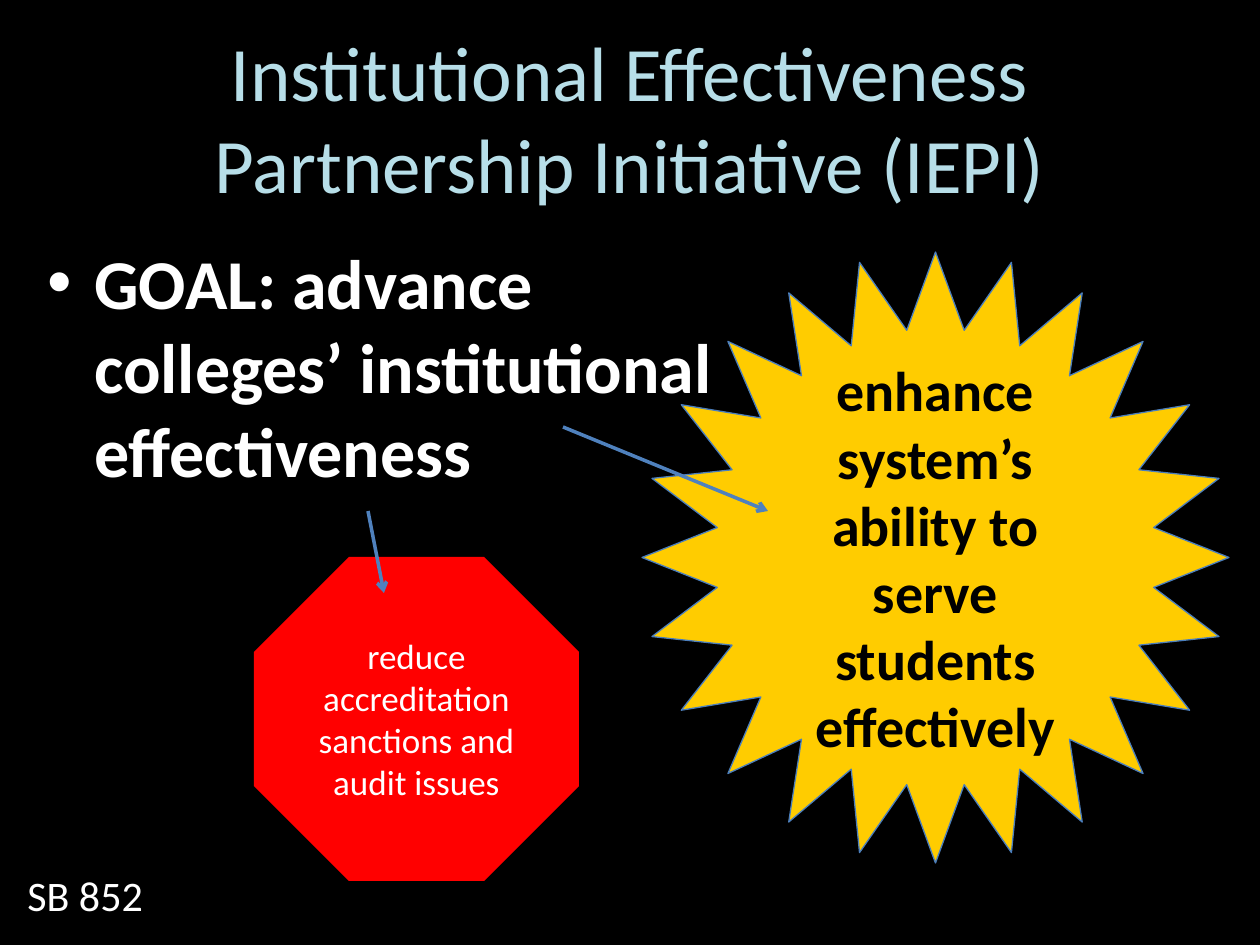
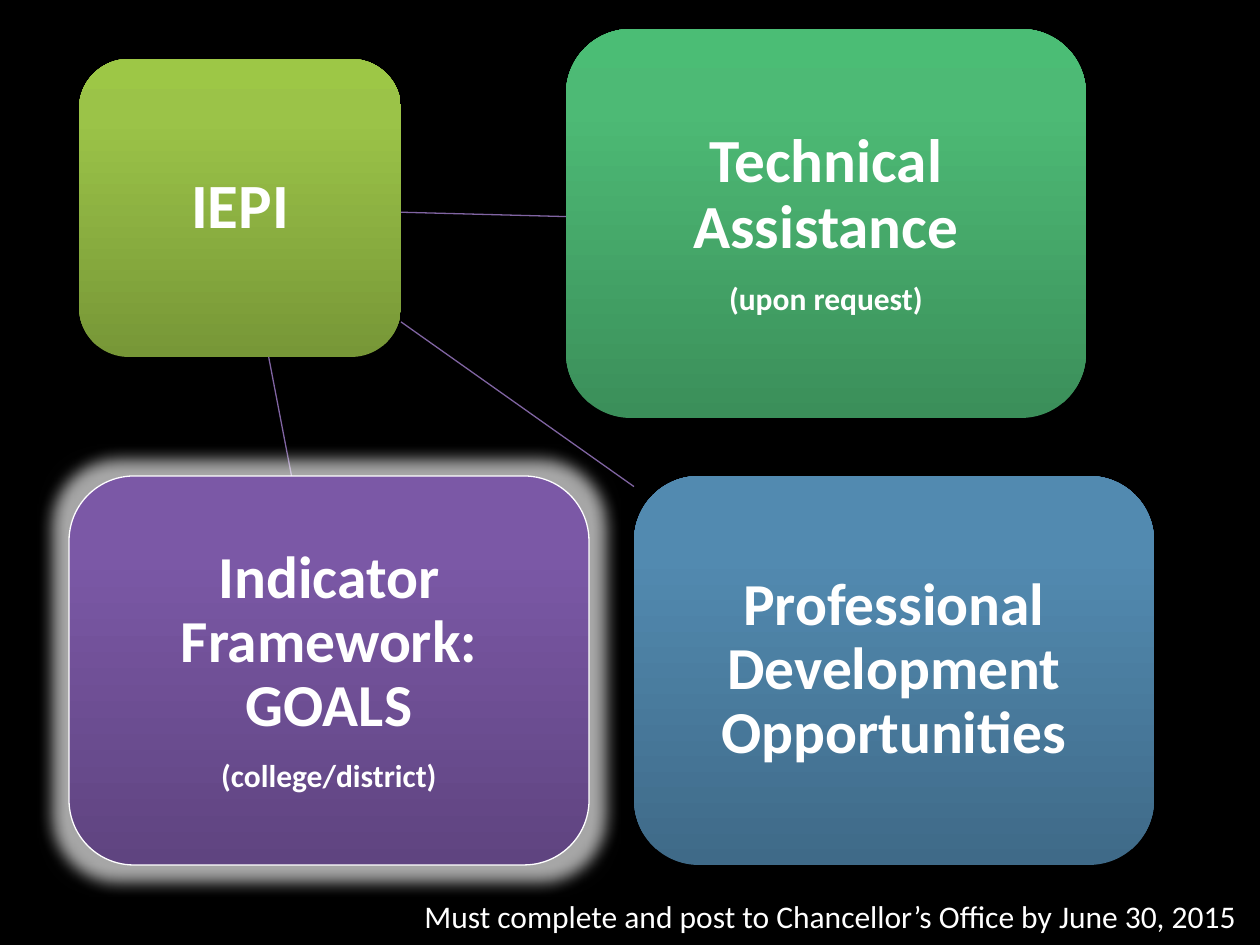
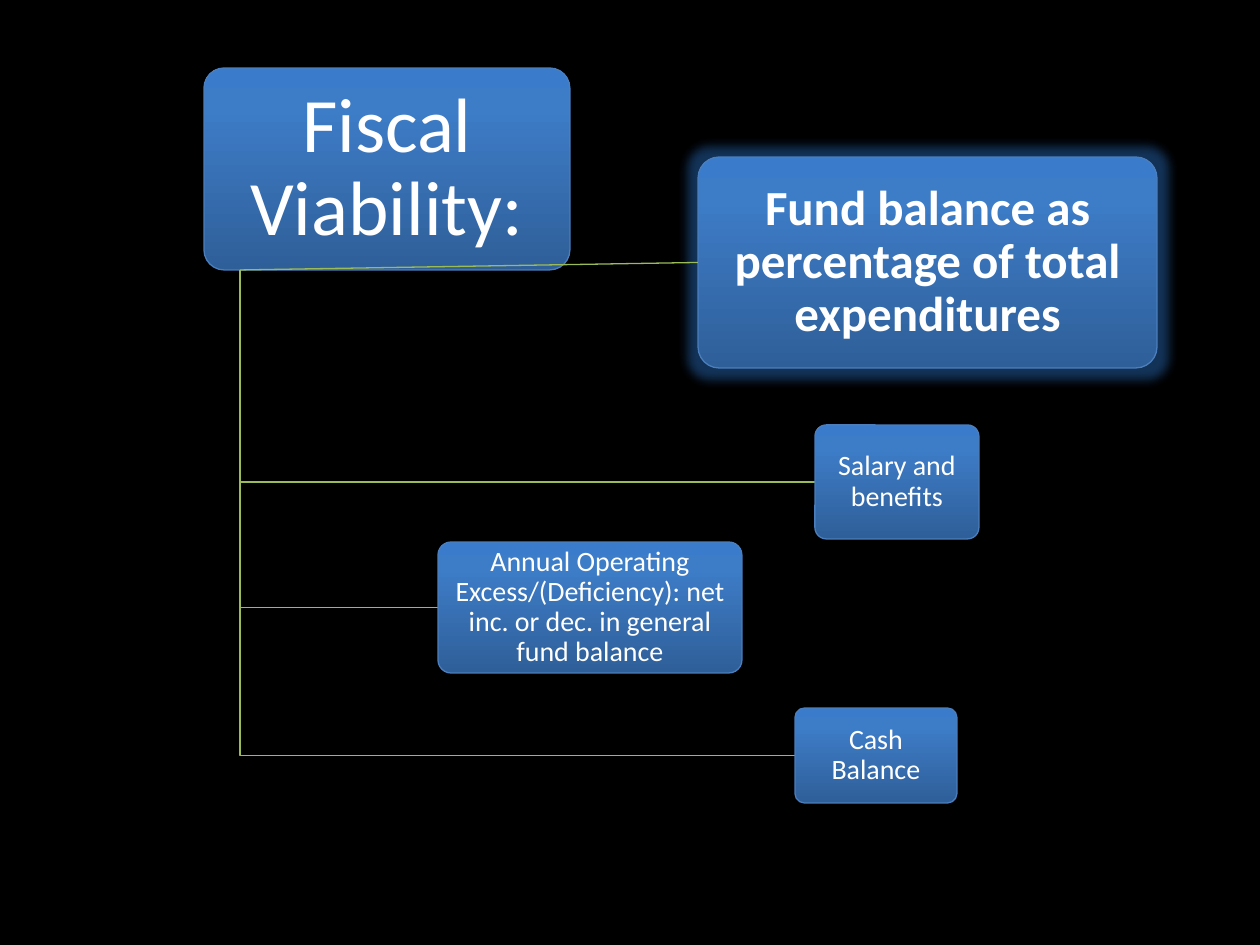
from copy import deepcopy
from dataclasses import dataclass

from lxml import etree
from pptx import Presentation
from pptx.dml.color import RGBColor
from pptx.enum.shapes import MSO_CONNECTOR as CONN, MSO_SHAPE as SHAPE
from pptx.enum.text import MSO_ANCHOR as ANCHOR, MSO_AUTO_SIZE as AUTO, PP_ALIGN as ALIGN
from pptx.oxml.ns import qn
from pptx.util import Emu, Pt

FONT = "Calibri"
BLACK, WHITE = "000000", "FFFFFF"
TITLE, ARROW, OUTLINE = "B7DEE8", "4F81BD", "4B7EBC"
RED, GOLD, PURPLE, GREEN = "FF0000", "FFCC00", "8064A2", "9BBB59"
BLUE_GRAD = ("2F5F99", "3D7CC7", "3A7CCB")
GRAD_STOPS = (0, 0.8, 1)


@dataclass(frozen=True)
class Glow:
    color: str
    radius: int
    alpha: int


@dataclass(frozen=True)
class Box:
    x: int
    y: int
    w: int
    h: int
    lines: tuple[tuple[str, int], ...]
    fill: tuple[str, ...]
    kind: SHAPE = SHAPE.ROUNDED_RECTANGLE
    bold: bool = False
    color: str = WHITE
    line: str = ""
    adj: float | None = None
    inset: tuple[int, int] = (13, 6)
    tight: bool = True
    glow: Glow | None = None

    @property
    def center(self) -> tuple[float, float]:
        return self.x + self.w / 2, self.y + self.h / 2


def px(n: float) -> Emu:
    return Emu(round(n * 914400 / 126))


def rgb(color: str) -> RGBColor:
    return RGBColor.from_string(color)


def format_paragraph(p, size: int, color: str, bold: bool = False, align=ALIGN.CENTER) -> None:
    p.alignment = align
    for r in p.runs:
        r.font.name = FONT
        r.font.size = Pt(size)
        r.font.bold = bold
        r.font.color.rgb = rgb(color)


def fill_shape(sp, colors: tuple[str, ...]) -> None:
    fill = sp.fill
    if len(colors) == 1:
        fill.solid()
        fill.fore_color.rgb = rgb(colors[0])
        return
    fill.gradient()
    fill.gradient_angle = 90
    stops = sp.element.spPr.find(f".//{qn('a:gsLst')}")
    stops.insert(1, deepcopy(stops[0]))
    for stop, position, color in zip(fill.gradient_stops, GRAD_STOPS, colors):
        stop.position = position
        stop.color.rgb = rgb(color)


def add_glow(sp, glow: Glow) -> None:
    effects = sp.element.spPr.find(qn("a:effectLst"))
    node = etree.SubElement(effects, qn("a:glow"), rad=str(px(glow.radius)))
    clr = etree.SubElement(node, qn("a:srgbClr"), val=glow.color)
    etree.SubElement(clr, qn("a:alpha"), val=str(glow.alpha * 1000))


def add_box(s, box: Box):
    sp = s.shapes.add_shape(box.kind, px(box.x), px(box.y), px(box.w), px(box.h))
    sp.shadow.inherit = False
    if box.adj is not None:
        sp.adjustments[0] = box.adj
    fill_shape(sp, box.fill)
    if box.line:
        sp.line.color.rgb = rgb(box.line)
        sp.line.width = Pt(0.75)
    else:
        sp.line.fill.background()
    if box.glow:
        add_glow(sp, box.glow)
    tf = sp.text_frame
    tf.word_wrap = True
    tf.vertical_anchor = ANCHOR.MIDDLE
    tf.margin_left = tf.margin_right = px(box.inset[0])
    tf.margin_top = tf.margin_bottom = px(box.inset[1])
    tf.text = "\n".join(text for text, _ in box.lines)
    for p, (_, size) in zip(tf.paragraphs, box.lines):
        format_paragraph(p, size, box.color, box.bold)
        if box.tight:
            p.line_spacing = 0.9
            p.space_after = Pt(round(size * 0.35))
    return sp


def add_line(s, start: tuple[float, float], end: tuple[float, float], color: str,
             width: float = 0.75, arrow: bool = False):
    cxn = s.shapes.add_connector(CONN.STRAIGHT, *map(px, start + end))
    cxn.line.color.rgb = rgb(color)
    cxn.line.width = Pt(width)
    if arrow:
        etree.SubElement(cxn.line._get_or_add_ln(), qn("a:tailEnd"), type="arrow")
    etree.SubElement(cxn.element.spPr, qn("a:effectLst"))
    return cxn


def add_branch(s, points: list[tuple[float, float]], color: str) -> None:
    builder = s.shapes.build_freeform(*map(px, points[0]))
    builder.add_line_segments([tuple(map(px, pt)) for pt in points[1:]], close=False)
    sp = builder.convert_to_shape()
    sp.shadow.inherit = False
    sp.fill.background()
    sp.line.color.rgb = rgb(color)
    sp.line.width = Pt(0.75)


def add_text(s, x: int, y: int, w: int, h: int, text: str, size: int,
             bold: bool = False, wrap: bool = False):
    tf = s.shapes.add_textbox(px(x), px(y), px(w), px(h)).text_frame
    tf.word_wrap = wrap
    tf.auto_size = AUTO.NONE if wrap else AUTO.SHAPE_TO_FIT_TEXT
    tf.text = text
    p = tf.paragraphs[0]
    format_paragraph(p, size, WHITE, bold, ALIGN.LEFT)
    return p


def add_bullet(p, indent: int) -> None:
    pPr = p._p.get_or_add_pPr()
    pPr.set("marL", str(px(indent)))
    pPr.set("indent", str(-px(indent)))
    etree.SubElement(pPr, qn("a:buFont"), typeface="Arial")
    etree.SubElement(pPr, qn("a:buChar"), char="•")


def edge_point(box: Box, toward: Box) -> tuple[float, float]:
    (cx, cy), (tx, ty) = box.center, toward.center
    dx, dy = tx - cx, ty - cy
    t = min(box.w / 2 / max(abs(dx), 1), box.h / 2 / max(abs(dy), 1))
    return cx + dx * t, cy + dy * t


def goal_slide(prs) -> None:
    s = prs.slides.add_slide(prs.slide_layouts[5])
    title = s.shapes.title
    title.left, title.top, title.width, title.height = map(px, (63, 38, 1134, 157))
    tf = title.text_frame
    tf.text = "Institutional Effectiveness Partnership Initiative (IEPI)"
    tf.vertical_anchor = ANCHOR.MIDDLE
    format_paragraph(tf.paragraphs[0], 44, TITLE)

    goal = add_text(s, 35, 233, 733, 301,
                    "GOAL: advance colleges’ institutional effectiveness", 40, True, True)
    goal.space_before = Pt(8)
    add_bullet(goal, 47)

    add_box(s, Box(254, 557, 325, 324,
                   (("reduce accreditation sanctions and audit issues", 20),),
                   (RED,), SHAPE.OCTAGON, tight=False))
    add_box(s, Box(642, 252, 587, 611,
                   (("enhance system’s ability to serve students effectively", 32),),
                   (GOLD,), SHAPE.STAR_24_POINT, True, BLACK, OUTLINE, tight=False))
    for start, end in (((368, 511), (384, 593)), ((563, 427), (768, 511))):
        add_line(s, start, end, ARROW, 2, True)
    add_text(s, 15, 863, 142, 63, "SB 852", 24)


def pillars_slide(prs) -> None:
    s = prs.slides.add_slide(prs.slide_layouts[6])
    w, h, row = 520, 389, 476
    iepi = Box(79, 59, 322, 298, (("IEPI", 36),),
               ("779737", "9BC348", "9DC746"), bold=True, inset=(12, 12))
    pillars = (
        Box(566, 29, w, h, (("Technical Assistance", 35), ("(upon request)", 18)),
            ("3B8F5A", "4DBA75", "4BBD75"), bold=True, inset=(12, 12)),
        Box(634, row, w, h, (("Professional Development Opportunities", 34),),
            ("3F6A88", "528AB0", "518BB3"), bold=True, inset=(12, 12)),
        Box(69, row, w, h,
            (("Indicator Framework: GOALS", 34), ("(college/district)", 18)),
            ("5F4480", "7B58A6", "7C57A8"), bold=True, line=WHITE, inset=(12, 12),
            glow=Glow(WHITE, 31, 65)),
    )
    add_box(s, iepi)
    for pillar in pillars:
        add_line(s, edge_point(iepi, pillar), edge_point(pillar, iepi), PURPLE)
        add_box(s, pillar)
    add_text(s, 412, 891, 848, 89,
             "Must complete and post to Chancellor’s Office by June 30, 2015", 18)


def fiscal_slide(prs) -> None:
    s = prs.slides.add_slide(prs.slide_layouts[6])

    def fiscal_box(x: int, y: int, w: int, h: int, text: str, size: int = 16,
                   inset: tuple[int, int] = (4, 3), **extra) -> Box:
        return Box(x, y, w, h, ((text, size),), BLUE_GRAD, line=OUTLINE,
                   adj=0.1, inset=inset, **extra)

    root = fiscal_box(204, 68, 366, 202, "Fiscal Viability:", 44, (11, 7))
    fund = fiscal_box(698, 157, 459, 211, "Fund balance as percentage of total expenditures",
                      28, (7, 5), bold=True, glow=Glow("2F7FDB", 20, 40))
    measures = (
        fiscal_box(815, 425, 164, 114, "Salary and benefits"),
        fiscal_box(438, 542, 304, 131,
                   "Annual Operating Excess/(Deficiency): net inc. or dec. in general fund balance"),
        fiscal_box(795, 708, 162, 95, "Cash Balance"),
    )
    trunk = (root.x + root.w // 10, root.y + root.h)
    add_box(s, root)
    fund_sp = add_box(s, fund)
    add_line(s, trunk, (fund.x, fund.center[1]), GREEN).end_connect(fund_sp, 1)
    for measure in measures:
        mid = measure.center[1]
        add_branch(s, [trunk, (trunk[0], mid), (measure.x, mid)], GREEN)
        add_box(s, measure)


def main() -> None:
    prs = Presentation()
    prs.slide_width, prs.slide_height = px(1260), px(945)
    bg = prs.slide_master.background.fill
    bg.solid()
    bg.fore_color.rgb = rgb(BLACK)
    goal_slide(prs)
    pillars_slide(prs)
    fiscal_slide(prs)
    prs.save("out.pptx")


if __name__ == "__main__":
    main()
